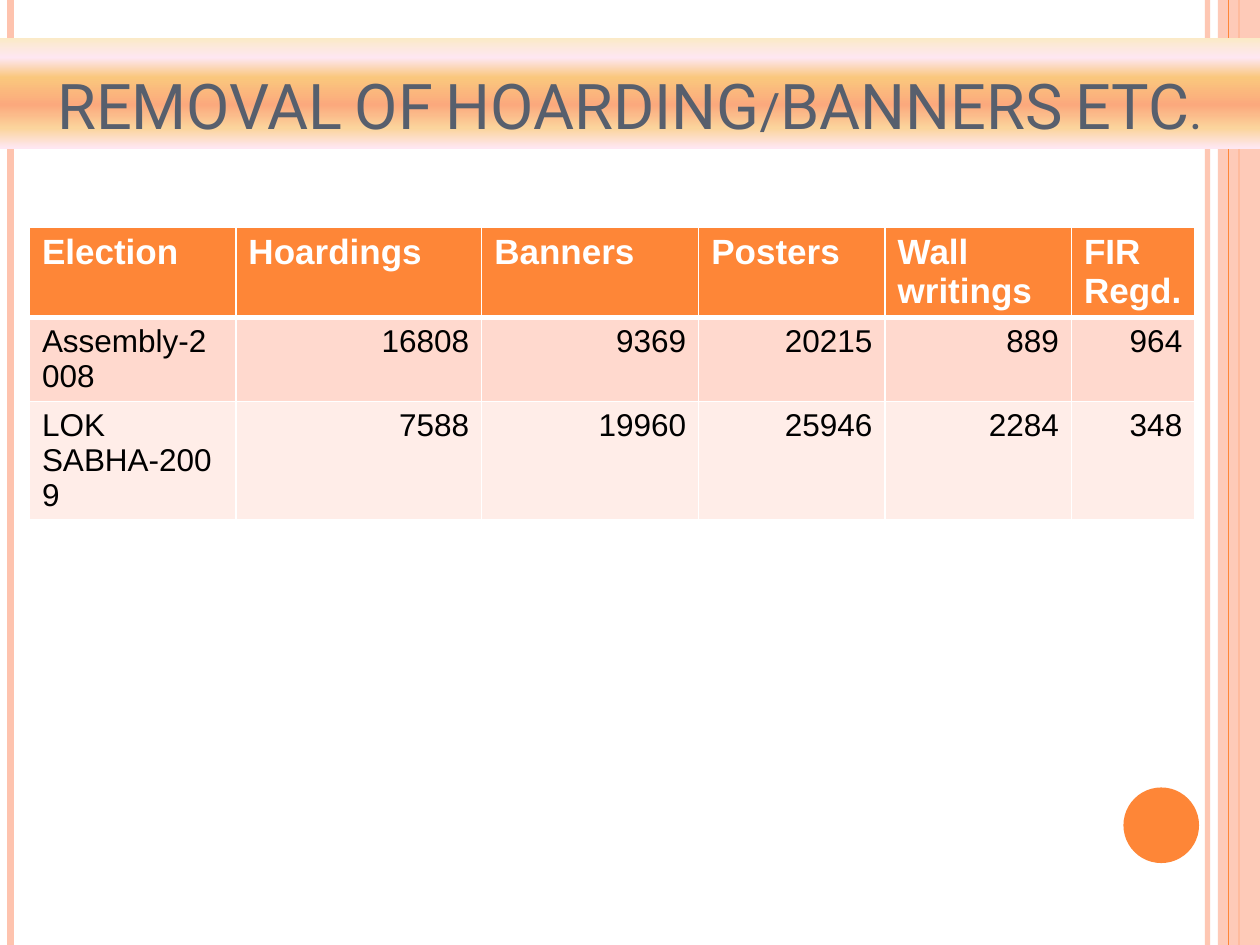
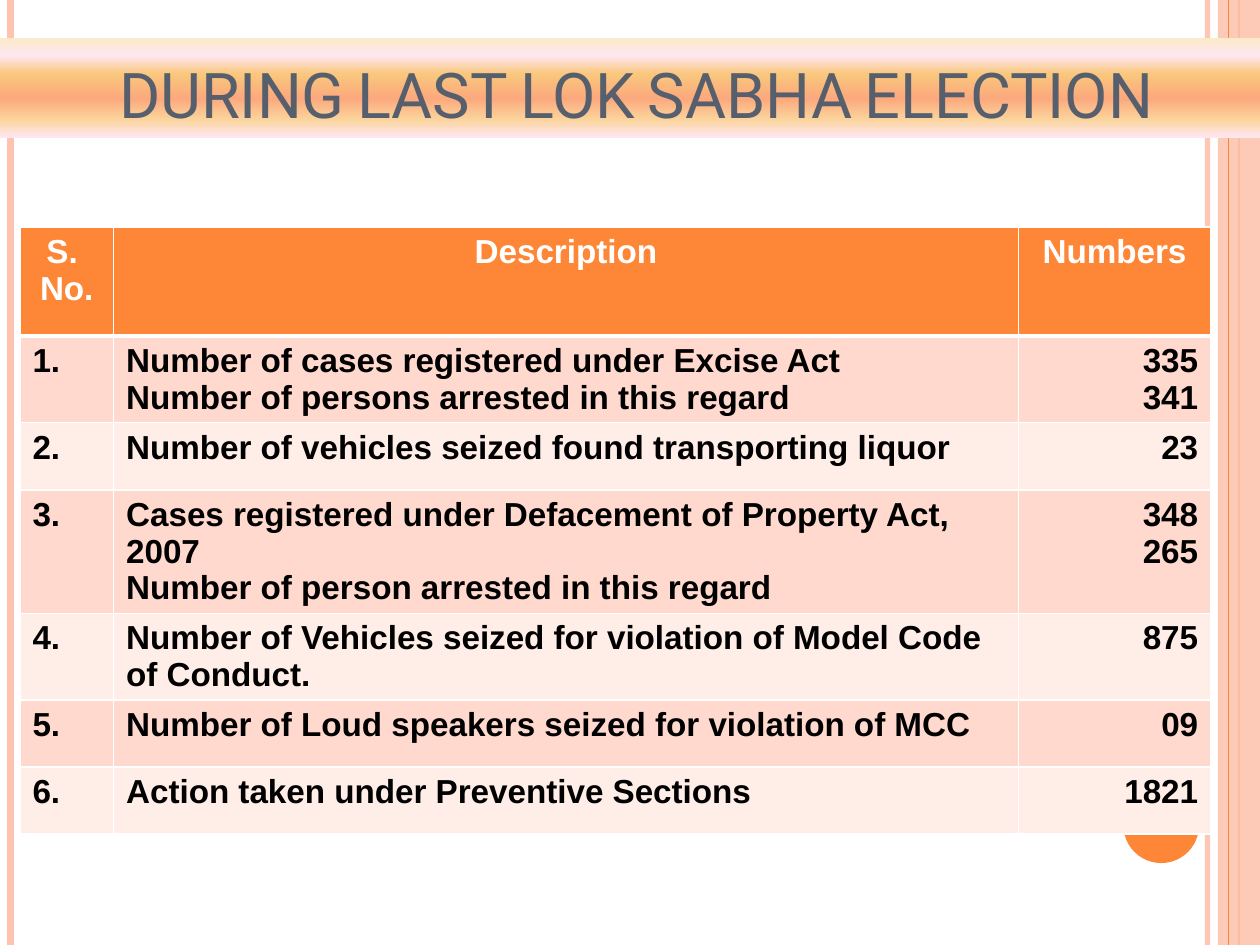
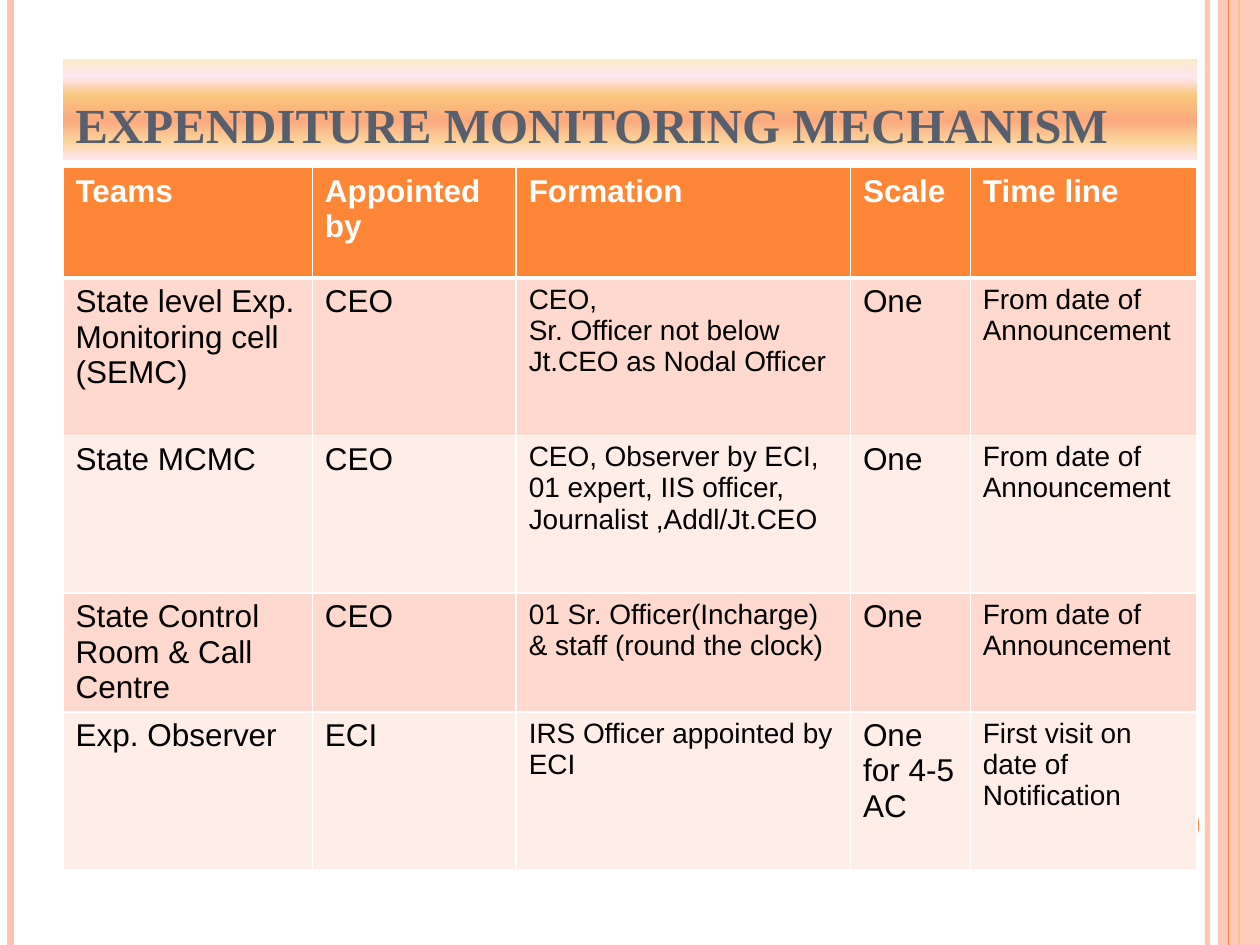
from collections import namedtuple

from lxml.etree import SubElement
from pptx import Presentation
from pptx.dml.color import RGBColor
from pptx.enum.shapes import MSO_CONNECTOR, MSO_SHAPE
from pptx.enum.text import MSO_ANCHOR, PP_ALIGN
from pptx.oxml.ns import qn
from pptx.util import Pt

Box = namedtuple("Box", "left top width height")
Column = namedtuple("Column", "width align size", defaults=(PP_ALIGN.LEFT, 18))

PAGE = Box(0, 0, 720, 540)
ORANGE = RGBColor(0xFE, 0x86, 0x37)
PEACH = RGBColor(0xFE, 0xC3, 0xAE)
SLATE = RGBColor(0x57, 0x5F, 0x6D)
WHITE = RGBColor(0xFF, 0xFF, 0xFF)
BLACK = RGBColor(0x00, 0x00, 0x00)
ROW_TINTS = (RGBColor(0xFF, 0xD9, 0xCE), RGBColor(0xFF, 0xED, 0xE8))
CREAM = RGBColor(0xFB, 0xEA, 0xC7)
PINK = RGBColor(0xFE, 0xE7, 0xF2)
AMBER = RGBColor(0xFA, 0xC7, 0x7D)
SALMON = RGBColor(0xFB, 0xA9, 0x7D)
SAND = RGBColor(0xFB, 0xD4, 0x9C)
TITLE_GRADIENT = ((0, CREAM), (18, PINK), (36, AMBER),
                  (61, SALMON), (82, SAND), (100, PINK))

SMALL_CAPS_TITLE = {"name": "Roboto", "size": Pt(36), "bold": False}
SERIF_TITLE = {"name": "Times New Roman", "size": Pt(28), "bold": True}


def in_points(box):
    return [Pt(length) for length in box]


def set_font(font, color, formats):
    for name, value in formats.items():
        setattr(font, name, value)
    font.color.rgb = color


def add_color(parent, color, opacity=100):
    node = SubElement(parent, qn("a:srgbClr"), val=str(color))
    if opacity < 100:
        SubElement(node, qn("a:alpha"), val=str(opacity * 1000))


def set_opacity(properties, opacity):
    """Make the first solid colour found under the properties translucent."""
    color = next(properties.iter(qn("a:srgbClr")))
    SubElement(color, qn("a:alpha"), val=str(opacity * 1000))


def add_plain_shape(slide, kind, box, color=None):
    shape = slide.shapes.add_shape(kind, *in_points(box))
    shape.shadow.inherit = False
    shape.line.fill.background()
    if color is not None:
        shape.fill.solid()
        shape.fill.fore_color.rgb = color
    return shape


def add_stripe(slide, box, offset, color, weight, opacity=100):
    """Draw a vertical line down the box, offset from its left edge."""
    x = Pt(box.left + offset)
    line = slide.shapes.add_connector(
        MSO_CONNECTOR.STRAIGHT, x, Pt(box.top), x, Pt(box.top + box.height))
    line.line.color.rgb = color
    line.line.width = Pt(weight)
    properties = line._element.spPr
    if opacity < 100:
        set_opacity(properties, opacity)
    SubElement(properties, qn("a:effectLst"))


def add_frame(slide, box):
    """Draw the side stripes and the disc that every slide carries."""
    add_stripe(slide, box, 690, PEACH, 3, opacity=93)
    add_stripe(slide, box, 6, PEACH, 4.5)
    add_stripe(slide, box, 708, ORANGE, 1.5)
    band = add_plain_shape(slide, MSO_SHAPE.RECTANGLE,
                           Box(box.left + 696, box.top, 24, box.height), PEACH)
    set_opacity(band._element.spPr, 87)
    add_stripe(slide, box, 702, ORANGE, 0.75)
    add_plain_shape(slide, MSO_SHAPE.OVAL,
                    Box(box.left + 642, box.top + 450, 43.2, 43.2), ORANGE)


def add_title(slide, box, text, formats, align, small_caps):
    banner = add_plain_shape(slide, MSO_SHAPE.RECTANGLE, box)
    banner.fill.gradient()
    banner.fill.gradient_angle = 270
    stops = next(banner._element.spPr.iter(qn("a:gsLst")))
    stops.clear()
    for position, color in TITLE_GRADIENT:
        stop = SubElement(stops, qn("a:gs"), pos=str(position * 1000))
        add_color(stop, color)

    frame = banner.text_frame
    frame.word_wrap = True
    frame.vertical_anchor = MSO_ANCHOR.BOTTOM
    paragraph = frame.paragraphs[0]
    paragraph.alignment = align
    run = paragraph.add_run()
    run.text = text
    set_font(run.font, SLATE, formats)
    if small_caps:
        run.font._element.set("cap", "small")


def set_borders(cell, top, bottom):
    properties = cell._tc.get_or_add_tcPr()
    for side, weight in (("L", 1), ("R", 1), ("T", top), ("B", bottom)):
        line = SubElement(properties, qn(f"a:ln{side}"), w=str(Pt(weight)))
        add_color(SubElement(line, qn("a:solidFill")), WHITE)


def fill_cell(cell, text, color, background, align, formats):
    cell.fill.solid()
    cell.fill.fore_color.rgb = background
    cell.text = text
    for paragraph in cell.text_frame.paragraphs:
        paragraph.alignment = align
        for run in paragraph.runs:
            set_font(run.font, color, formats)


def add_grid(slide, left, top, columns, heights, rows, header_size,
             header_align=PP_ALIGN.LEFT, bold_body=False):
    """Add a table with an orange header row and alternating tinted rows."""
    box = Box(left, top, sum(column.width for column in columns), sum(heights))
    table = slide.shapes.add_table(len(rows), len(columns),
                                   *in_points(box)).table
    for table_column, column in zip(table.columns, columns):
        table_column.width = Pt(column.width)
    for index, (height, texts) in enumerate(zip(heights, rows)):
        table.rows[index].height = Pt(height)
        for position, (column, text) in enumerate(zip(columns, texts)):
            cell = table.cell(index, position)
            set_borders(cell, top=3 if index == 1 else 1,
                        bottom=3 if index == 0 else 1)
            if index == 0:
                formats = {"name": "Arial", "size": Pt(header_size), "bold": True}
                fill_cell(cell, text, WHITE, ORANGE, header_align, formats)
            else:
                formats = {"name": "Arial", "size": Pt(column.size),
                           "bold": bold_body}
                fill_cell(cell, text, BLACK, ROW_TINTS[(index - 1) % 2],
                          column.align, formats)


def add_slide(presentation, title, box, formats=SMALL_CAPS_TITLE,
              align=PP_ALIGN.CENTER, small_caps=True):
    slide = presentation.slides.add_slide(presentation.slide_layouts[6])
    add_frame(slide, PAGE)
    add_title(slide, box, title, formats, align, small_caps)
    return slide


def add_hoardings_slide(presentation):
    slide = add_slide(presentation, "REMOVAL OF HOARDING/BANNERS ETC.",
                      Box(0, 21.6, 720, 63))
    widths = (140.5, 124, 106.5, 106.5, 70.5)
    columns = [Column(118)] + [Column(width, PP_ALIGN.RIGHT) for width in widths]
    rows = (
        ("Election", "Hoardings", "Banners", "Posters", "Wall writings", "FIR Regd."),
        ("Assembly-2008", "16808", "9369", "20215", "889", "964"),
        ("LOK SABHA-2009", "7588", "19960", "25946", "2284", "348"),
    )
    add_grid(slide, 16.8, 129.6, columns, (51, 48, 67), rows, header_size=20)


def add_last_election_slide(presentation):
    slide = add_slide(presentation, " DURING LAST LOK SABHA ELECTION",
                      Box(0, 21.6, 720, 57))
    columns = (Column(53.5, size=19), Column(517, size=19),
               Column(110, PP_ALIGN.RIGHT, 19))
    rows = (
        ("S. \nNo.", "Description", "Numbers"),
        ("1.", "Number of cases registered under Excise Act\n"
               "Number of persons arrested in this regard", "335\n341"),
        ("2.", "Number of vehicles seized found transporting liquor", "23"),
        ("3.", "Cases registered under Defacement of Property Act, 2007\n"
               "Number of person arrested in this regard", "348\n265"),
        ("4.", "Number of Vehicles seized for violation of Model Code of Conduct.",
         "875"),
        ("5.", "Number of Loud speakers seized for violation of MCC", "09"),
        ("6.", "Action taken under Preventive Sections", "1821"),
    )
    add_grid(slide, 11.4, 129.6, columns, (62.5, 49.5, 38.3, 70.5, 49.5, 38.3, 38.3),
             rows, header_size=19, header_align=PP_ALIGN.CENTER, bold_body=True)


def add_expenditure_slide(presentation):
    slide = add_slide(presentation, "EXPENDITURE MONITORING MECHANISM",
                      Box(36, 33.8, 648, 57.6), SERIF_TITLE,
                      PP_ALIGN.LEFT, small_caps=False)
    columns = (Column(142.5), Column(116.5), Column(191, size=16),
               Column(68.5), Column(129.5, size=16))
    from_announcement = "From date of Announcement"
    rows = (
        ("Teams", "Appointed by", "Formation", "Scale", "Time line"),
        ("State level Exp. Monitoring cell (SEMC)", "CEO",
         "CEO,\nSr. Officer not below Jt.CEO as Nodal Officer",
         "One", from_announcement),
        ("State MCMC", "CEO",
         "CEO, Observer by ECI, 01 expert, IIS officer, Journalist ,Addl/Jt.CEO",
         "One", from_announcement),
        ("State Control Room & Call Centre", "CEO",
         "01 Sr. Officer(Incharge) & staff (round the clock)",
         "One", from_announcement),
        ("Exp. Observer", "ECI", "IRS Officer appointed by ECI",
         "One for 4-5 AC", "First visit on date of Notification"),
    )
    add_grid(slide, 36, 95.8, columns, (63, 90, 90, 68, 90), rows, header_size=18)


def main():
    presentation = Presentation()
    presentation.slide_width = Pt(PAGE.width)
    presentation.slide_height = Pt(PAGE.height)
    add_hoardings_slide(presentation)
    add_last_election_slide(presentation)
    add_expenditure_slide(presentation)
    presentation.save("out.pptx")


if __name__ == "__main__":
    main()
